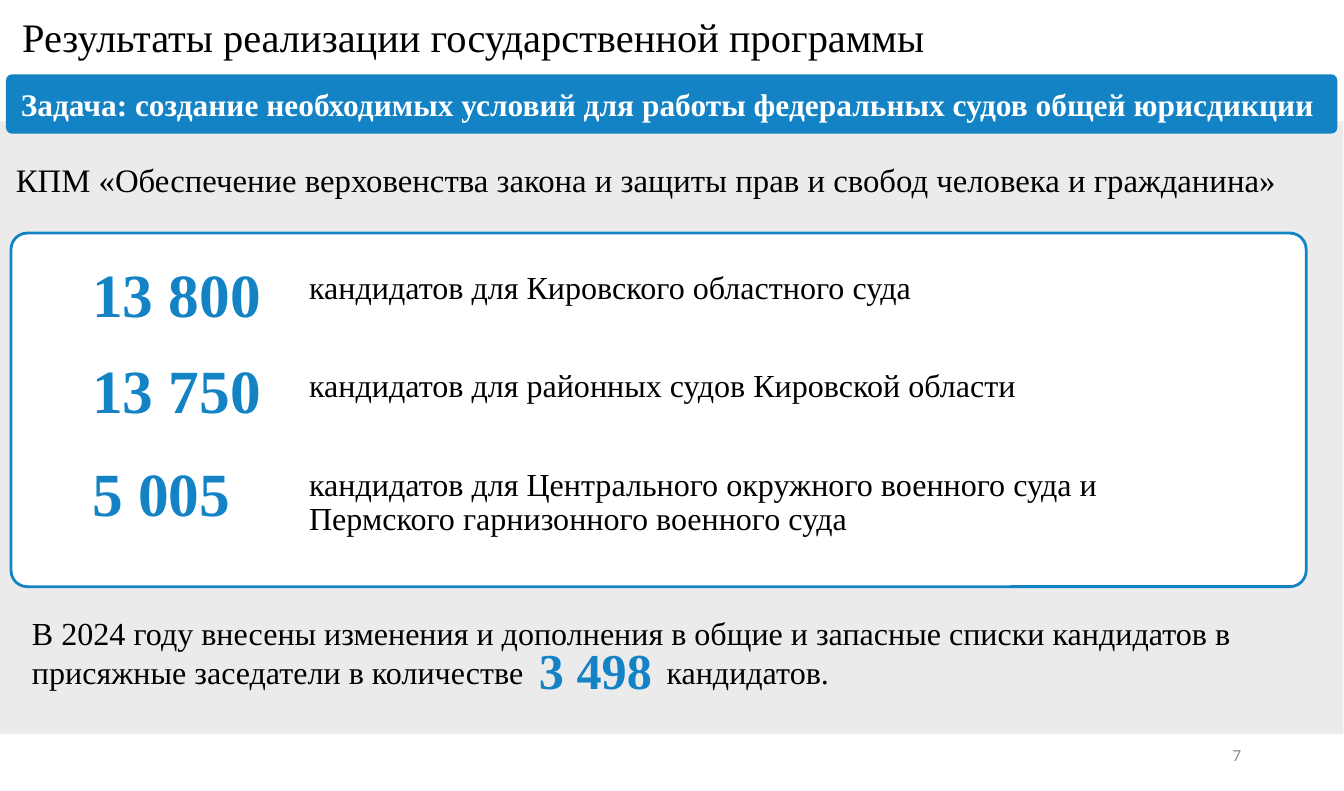
from dataclasses import dataclass

from lxml.etree import SubElement
from pptx import Presentation
from pptx.dml.color import RGBColor
from pptx.enum.shapes import MSO_SHAPE as Kind
from pptx.enum.text import MSO_ANCHOR as Anchor, MSO_AUTO_SIZE as Fit, PP_ALIGN as Align
from pptx.oxml.ns import qn
from pptx.util import Cm, Inches, Pt

BLUE, GREY, WHITE, BLACK = "1483C5", "EBEBEB", "FFFFFF", "000000"
SERIF = "Times New Roman"


@dataclass
class Box:
    left: float
    top: float
    width: float
    height: float

    def spans(self) -> list:
        return [Inches(n) for n in (self.left, self.top, self.width, self.height)]


@dataclass
class Style:
    size: float
    color: str = BLACK
    bold: bool = False
    face: str = SERIF
    align: Align = Align.LEFT
    line: float = 1.0
    gap: float = 0


@dataclass
class Label:
    box: Box
    lines: list[str]
    style: Style
    anchor: Anchor = Anchor.TOP


def paint(target, color: str) -> None:
    target.solid()
    target.fore_color.rgb = RGBColor.from_string(color)


def write(shape, lines: list[str], style: Style, anchor: Anchor) -> None:
    frame = shape.text_frame
    frame.text = "\n".join(lines)
    frame.word_wrap = True
    frame.auto_size = Fit.NONE
    frame.vertical_anchor = anchor
    for para in frame.paragraphs:
        para.alignment = style.align
        para.line_spacing = style.line
        para.space_before = Pt(style.gap)
        para.font.size = Pt(style.size)
        para.font.name = style.face
        para.font.bold = style.bold
        paint(para.font.fill, style.color)


def panel(slide, kind: Kind, box: Box, fill: str, edge: str = "", curve: float = 0):
    shape = slide.shapes.add_shape(kind, *box.spans())
    shape.shadow.inherit = False
    paint(shape.fill, fill)
    if edge:
        paint(shape.line.fill, edge)
        shape.line.width = Pt(2)
    else:
        shape.line.fill.background()
    if curve:
        shape.adjustments[0] = curve
    return shape


def label(slide, item: Label):
    shape = slide.shapes.add_textbox(*item.box.spans())
    write(shape, item.lines, item.style, item.anchor)
    return shape


def add_tab(para, place: float) -> None:
    props = para._p.get_or_add_pPr()
    tabs = SubElement(props, qn("a:tabLst"))
    SubElement(tabs, qn("a:tab"), pos=str(Inches(place)), algn="l")
    font = props.find(qn("a:defRPr"))
    if font is not None:
        font.addprevious(tabs)


def main() -> None:
    deck = Presentation()
    deck.slide_width, deck.slide_height = Cm(34), Cm(20)
    slide = deck.slides.add_slide(deck.slide_layouts[5])

    title = slide.shapes.title
    title.left, title.top, title.width, title.height = Box(0.12, 0.07, 12.77, 0.59).spans()
    write(title, ["Результаты реализации государственной программы"], Style(29), Anchor.TOP)

    panel(slide, Kind.RECTANGLE, Box(0, 1.21, 13.38, 6.1), GREY)
    panel(slide, Kind.ROUNDED_RECTANGLE, Box(0.11, 2.32, 12.9, 3.52), WHITE, BLUE, 0.046)
    task = panel(slide, Kind.ROUNDED_RECTANGLE, Box(0.06, 0.74, 13.26, 0.59), BLUE, curve=0.101)
    write(task, ["Задача: создание необходимых условий для работы федеральных судов общей юрисдикции"],
          Style(22.5, WHITE, True), Anchor.MIDDLE)
    task.text_frame.margin_left = task.text_frame.margin_right = Inches(0.13)

    label(slide, Label(
        Box(0.06, 1.54, 13.3, 0.5),
        ["КПМ «Обеспечение верховенства закона и защиты прав и свобод человека и гражданина»"],
        Style(23.5)))

    count = Style(44, BLUE, True, line=0.9)
    for top, value in ((2.58, "13 800"), (3.54, "13 750"), (4.56, "5 005")):
        label(slide, Label(Box(0.82, top, 2.05, 0.56), [value], count))
    label(slide, Label(
        Box(2.98, 2.66, 8.52, 3.23),
        ["кандидатов для Кировского областного суда",
         "кандидатов для районных судов Кировской области",
         "кандидатов для Центрального окружного военного суда и Пермского гарнизонного военного суда"],
        Style(23, line=0.9, gap=45.5)))

    note = label(slide, Label(
        Box(0.22, 6.06, 12.57, 0.91),
        ["В 2024 году внесены изменения и дополнения в общие и запасные списки кандидатов в "
         "присяжные заседатели в количестве\tкандидатов."],
        Style(23)))
    add_tab(note.text_frame.paragraphs[0], 6.32)
    label(slide, Label(Box(5.27, 6.38, 1.43, 0.56), ["3 498"], Style(36, BLUE, True, line=0.9)))

    label(slide, Label(Box(9.45, 7.3, 3.01, 0.42), ["7"],
                       Style(12.1, "8C8C8C", face="Calibri", align=Align.RIGHT), Anchor.MIDDLE))
    deck.save("out.pptx")


if __name__ == "__main__":
    main()
